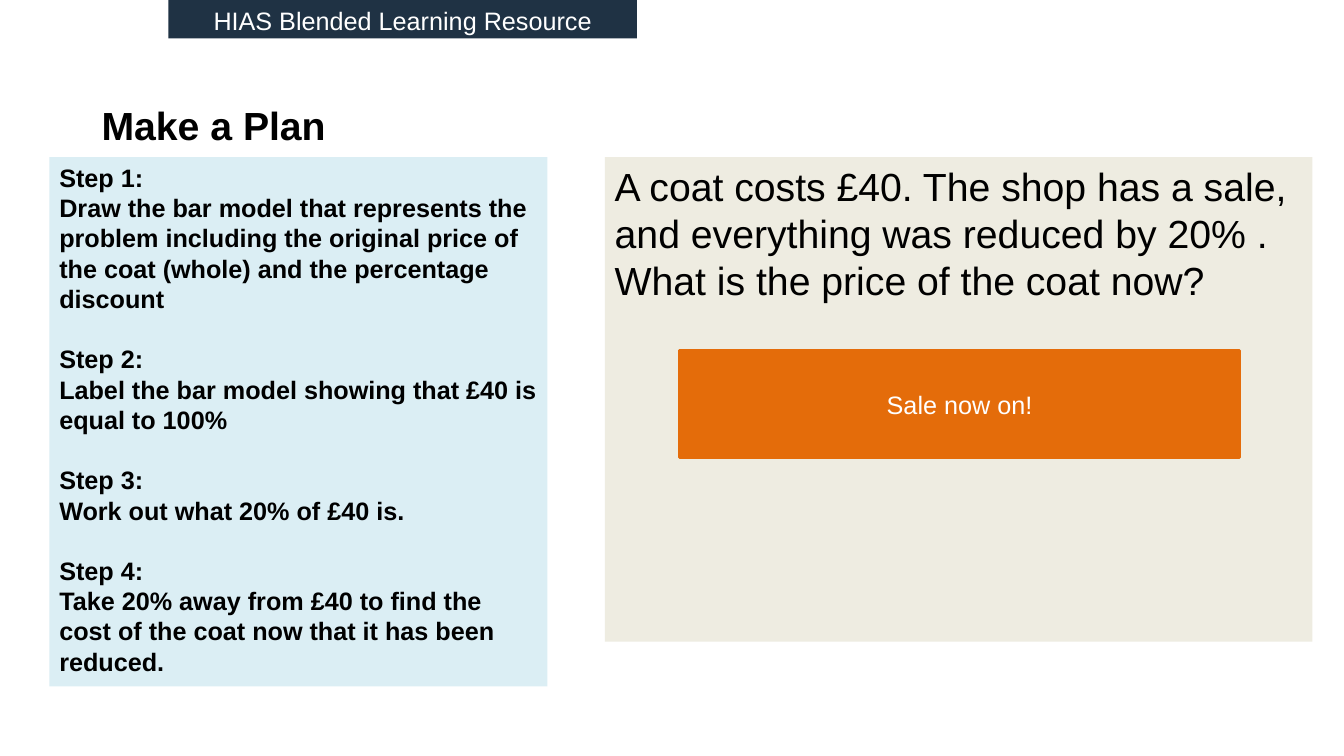
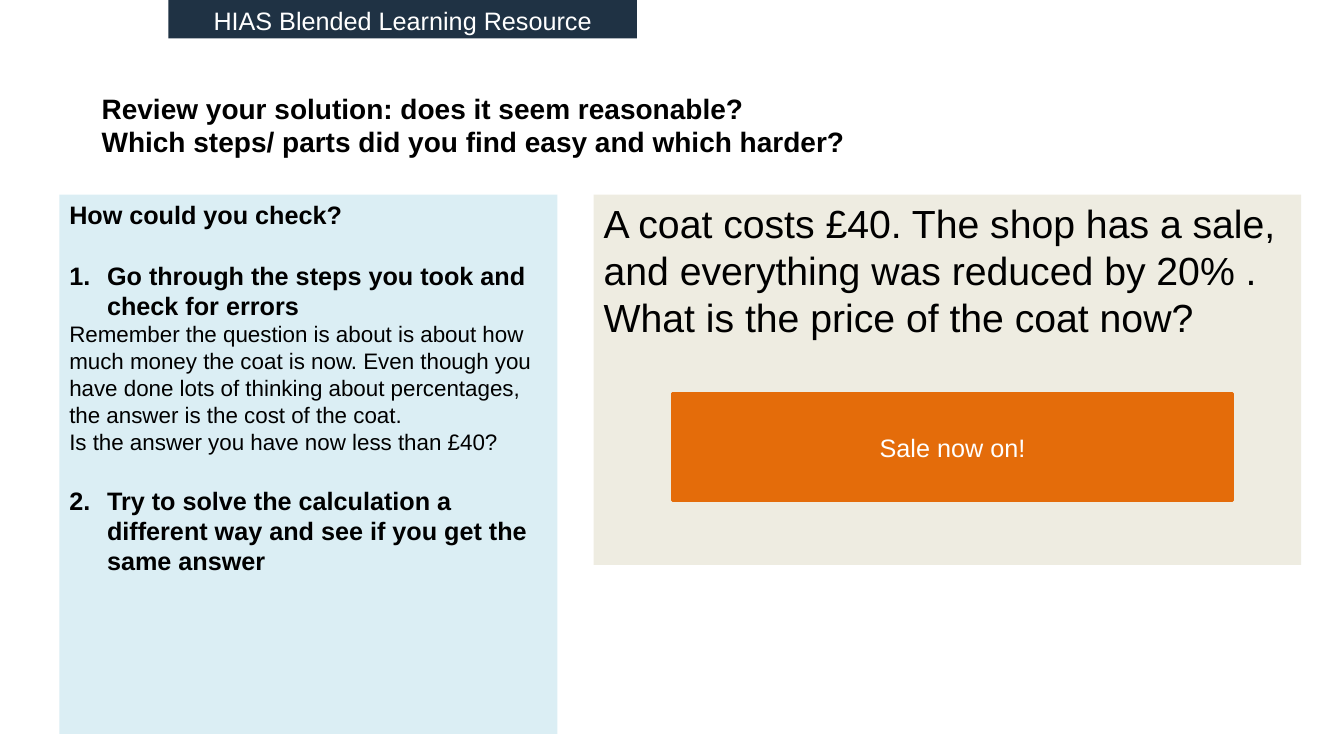
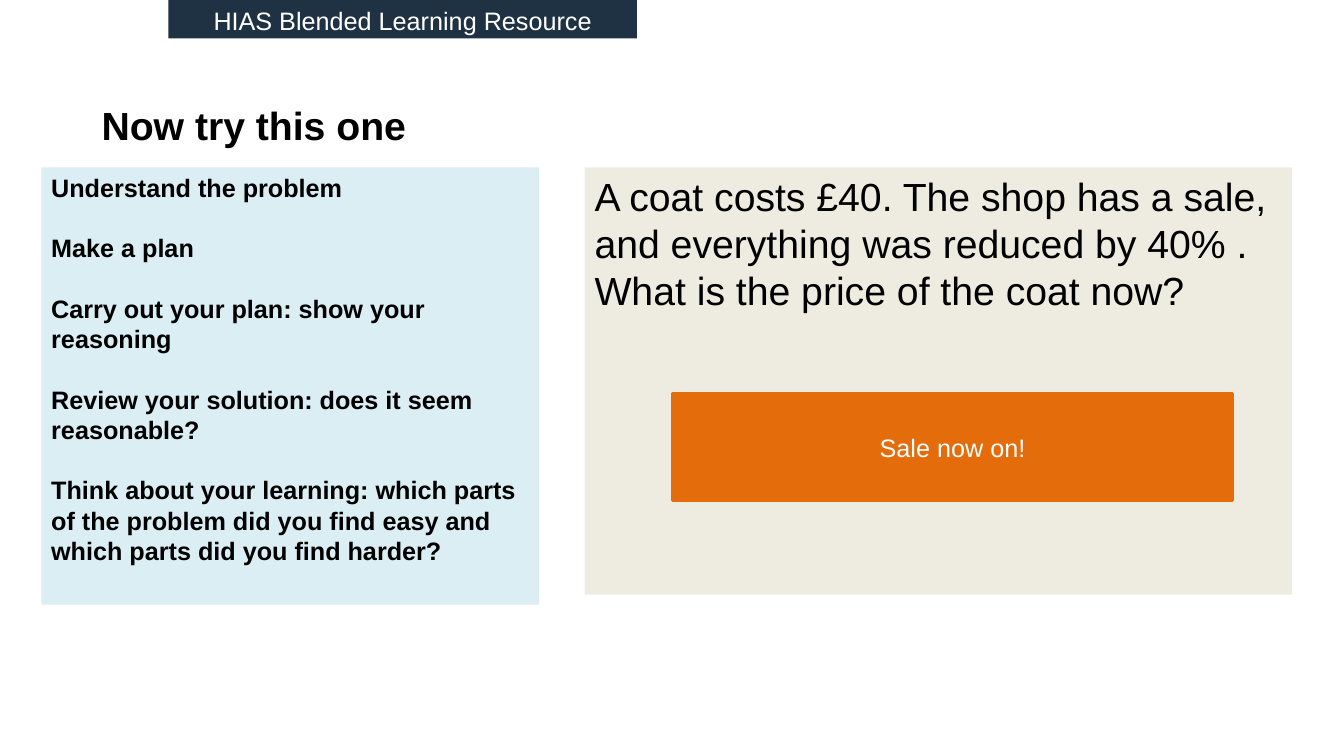
from dataclasses import dataclass

from lxml.etree import SubElement
from pptx import Presentation
from pptx.dml.color import RGBColor
from pptx.enum.shapes import MSO_SHAPE as Shape
from pptx.enum.text import MSO_ANCHOR as Anchor, PP_ALIGN as Align
from pptx.oxml.ns import qn
from pptx.util import Pt


@dataclass(frozen=True)
class Theme:
    font: str = "Arial"
    ink: str = "000000"
    white: str = "FFFFFF"
    navy: str = "1F3244"
    pale_blue: str = "DBEEF4"
    cream: str = "EEECE1"
    orange: str = "E46C0A"
    large: int = 28
    medium: int = 20
    normal: int = 18
    small: int = 16
    gap: float = 21.6
    number_indent: int = 27
    steps_width: float = 355.7
    question_width: float = 505.4


@dataclass(frozen=True)
class Line:
    text: str
    gap: bool = False
    number: int = 0
    detail: bool = False


class Lesson:
    def __init__(self, theme):
        self.theme = theme
        self.presentation = Presentation()
        self.presentation.slide_width = Pt(960)
        self.presentation.slide_height = Pt(540)
        self.slide = None

    def start(self, title_lines, title_size):
        self.slide = self.presentation.slides.add_slide(self.presentation.slide_layouts[6])
        self.title(title_lines, title_size)
        self.banner()

    def title(self, lines, size):
        shape = self.slide.shapes.add_textbox(Pt(65.5), Pt(66.2), Pt(648), Pt(46.1))
        frame = shape.text_frame
        frame.word_wrap = True
        frame.vertical_anchor = Anchor.MIDDLE
        for paragraph, text in zip(self.paragraphs(frame, len(lines)), lines):
            self.set_text(paragraph, text, size, bold=True)

    def banner(self):
        frame = self.panel(120.2, 0, 334.8, 27.4, self.theme.navy)
        self.set_text(frame.paragraphs[0], "HIAS Blended Learning Resource",
                      self.theme.normal, self.theme.white, align=Align.CENTER)

    def panel(self, left, top, width, height, color, anchor=Anchor.TOP, outlined=False):
        shape = self.slide.shapes.add_shape(
            Shape.RECTANGLE, Pt(left), Pt(top), Pt(width), Pt(height))
        shape.shadow.inherit = False
        shape.fill.solid()
        shape.fill.fore_color.rgb = RGBColor.from_string(color)
        if outlined:
            shape.line.color.rgb = RGBColor.from_string(color)
            shape.line.width = Pt(2)
        else:
            shape.line.fill.background()
        frame = shape.text_frame
        frame.word_wrap = True
        frame.vertical_anchor = anchor
        return frame

    def paragraphs(self, frame, count):
        for _ in range(count - 1):
            frame.add_paragraph()
        return frame.paragraphs

    def set_text(self, paragraph, text, size, color=None, bold=False, align=Align.LEFT):
        paragraph.text = text
        paragraph.alignment = align
        paragraph.font.name = self.theme.font
        paragraph.font.size = Pt(size)
        paragraph.font.bold = bold
        paragraph.font.color.rgb = RGBColor.from_string(color or self.theme.ink)

    def number(self, paragraph, start):
        properties = paragraph._p.get_or_add_pPr()
        indent = Pt(self.theme.number_indent)
        properties.set("marL", str(indent))
        properties.set("indent", str(-indent))
        SubElement(properties, qn("a:buFont"), typeface="+mj-lt")
        SubElement(properties, qn("a:buAutoNum"), type="arabicPeriod", startAt=str(start))

    def steps(self, left, top, height, lines):
        theme = self.theme
        frame = self.panel(left, top, theme.steps_width, height, theme.pale_blue)
        for paragraph, line in zip(self.paragraphs(frame, len(lines)), lines):
            if line.gap:
                paragraph.space_before = Pt(theme.gap)
            if line.number:
                self.number(paragraph, line.number)
            size = theme.small if line.detail else theme.normal
            self.set_text(paragraph, line.text, size, bold=not line.detail)

    def question(self, left, top, height, percent):
        frame = self.panel(left, top, self.theme.question_width, height, self.theme.cream)
        text = (f"A coat costs £40. The shop has a sale, and everything was reduced by "
                f"{percent}% . What is the price of the coat now?")
        self.set_text(frame.paragraphs[0], text, self.theme.large)

    def sale_sign(self, left, top):
        frame = self.panel(left, top, 400.4, 76.5, self.theme.orange, Anchor.MIDDLE, True)
        self.set_text(frame.paragraphs[0], "Sale now on!", self.theme.normal,
                      self.theme.white, align=Align.CENTER)


def main():
    theme = Theme()
    lesson = Lesson(theme)

    lesson.start(["Make a Plan"], theme.large)
    plan = [
        "Draw the bar model that represents the problem including the original price "
        "of the coat (whole) and the percentage discount",
        "Label the bar model showing that £40 is equal to 100%",
        "Work out what 20% of £40 is.",
        "Take 20% away from £40 to find the cost of the coat now that it has been reduced.",
    ]
    plan_lines = []
    for index, text in enumerate(plan, 1):
        plan_lines += [Line(f"Step {index}:", gap=index > 1), Line(text)]
    lesson.steps(35.3, 112.3, 378, plan_lines)
    lesson.question(432, 112.3, 346, 20)
    lesson.sale_sign(485.2, 250.4)

    lesson.start(["Review your solution: does it seem reasonable?",
                  "Which steps/ parts did you find easy and which harder?"], theme.medium)
    lesson.steps(42.4, 139, 385.2, [
        Line("How could you check?"),
        Line("Go through the steps you took and check for errors", gap=True, number=1),
        Line("Remember the question is about is about how much money the coat is now. "
             "Even though you have done lots of thinking about percentages, "
             "the answer is the cost of the coat.", detail=True),
        Line("Is the answer you have now less than £40?", detail=True),
        Line("Try to solve the calculation a different way and see if you get the same answer",
             gap=True, number=2),
    ])
    lesson.question(424.1, 139, 264.5, 20)
    lesson.sale_sign(480.2, 281.2)

    lesson.start(["Now try this one"], theme.large)
    review = [
        "Understand the problem",
        "Make a plan",
        "Carry out your plan: show your reasoning",
        "Review your solution: does it seem reasonable?",
        "Think about your learning: which parts of the problem did you find easy "
        "and which parts did you find harder?",
    ]
    lesson.steps(29.5, 119.5, 312.5,
                 [Line(text, gap=index > 0) for index, text in enumerate(review)])
    lesson.question(417.6, 119.5, 305.3, 40)
    lesson.sale_sign(480.2, 281.2)

    lesson.presentation.save("out.pptx")


if __name__ == "__main__":
    main()
